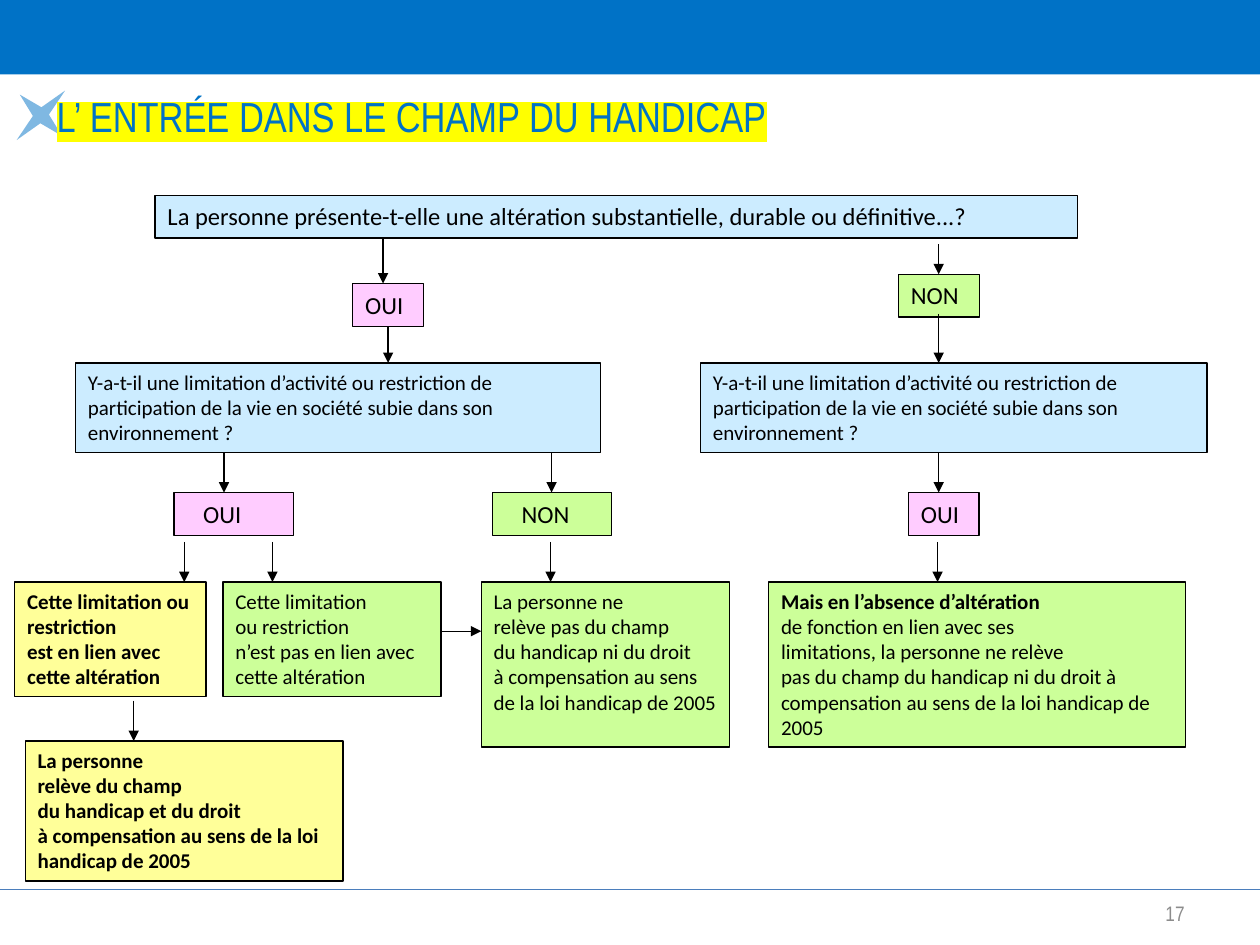
from dataclasses import dataclass

from lxml.etree import SubElement
from pptx import Presentation
from pptx.dml.color import RGBColor
from pptx.enum.shapes import MSO_CONNECTOR, MSO_SHAPE
from pptx.enum.text import MSO_ANCHOR, PP_ALIGN
from pptx.oxml import parse_xml
from pptx.oxml.ns import nsdecls, qn
from pptx.util import Pt

RECT, STAR = MSO_SHAPE.RECTANGLE, MSO_SHAPE.STAR_4_POINT
LINE = MSO_CONNECTOR.STRAIGHT
TOP, MIDDLE = MSO_ANCHOR.TOP, MSO_ANCHOR.MIDDLE
LEFT, RIGHT = PP_ALIGN.LEFT, PP_ALIGN.RIGHT
TITLE_ONLY = 5


@dataclass(frozen=True)
class Theme:
    blue: str = "0072C6"
    rule: str = "4B7EBC"
    mark: str = "FFFF00"
    grey: str = "8C8C8C"
    ink: str = "000000"
    sky: str = "CCECFF"
    pink: str = "FFCCFF"
    green: str = "CCFF99"
    yellow: str = "FFFF99"
    head: str = "Arial Narrow"
    body: str = "Calibri"
    title: float = 24
    large: float = 14
    small: float = 12
    stroke: float = 0.75


THEME = Theme()


@dataclass(frozen=True)
class Box:
    left: float
    top: float
    width: float
    height: float
    fill: str
    lines: tuple[str, ...]
    size: float = THEME.small
    bold: int = 0  # number of leading bold paragraphs
    inset: float = 7.2


@dataclass(frozen=True)
class Arrow:
    x1: float
    y1: float
    x2: float
    y2: float


# Tops of the rows and heights of the boxes
ASK, LIMIT, REPLY, CASE, END = 111.6, 207.4, 281.5, 332.6, 423.4
SHORT, MID = 24.5, 51.1
GAP = 23
LIMITS = ("Y-a-t-il une limitation d’activité ou restriction de participation "
          "de la vie en société subie dans son environnement ?",)

BOXES = (
    Box(88.6, ASK, 527, SHORT, THEME.sky,
        ("La personne présente-t-elle une altération substantielle, "
         "durable ou définitive...?",), THEME.large),
    Box(201.6, 162, 40.3, SHORT, THEME.pink, ("OUI",), THEME.large),
    Box(513.4, 156.7, 46.4, SHORT, THEME.green, ("NON",), THEME.large),
    Box(43.2, LIMIT, 300.2, MID, THEME.sky, LIMITS),
    Box(400.3, LIMIT, 289.4, MID, THEME.sky, LIMITS),
    Box(99.4, REPLY, 68.4, SHORT, THEME.pink, ("OUI",), THEME.large, inset=16.7),
    Box(281.3, REPLY, 68, SHORT, THEME.green, ("NON",), THEME.large, inset=16.7),
    Box(519.1, REPLY, 40.3, SHORT, THEME.pink, ("OUI",), THEME.large),
    Box(439.2, CASE, 238.3, 94.3, THEME.green,
        ("Mais en l’absence d’altération",
         "de fonction en lien avec ses",
         "limitations, la personne ne relève",
         "pas du champ du handicap ni du droit à",
         "compensation au sens de la loi handicap de 2005"), bold=1),
    Box(275, CASE, 141.8, 94.3, THEME.green,
        ("La personne ne",
         "relève pas du champ",
         "du handicap ni du droit",
         "à compensation au sens de la loi handicap de 2005")),
    Box(8.4, CASE, 109.4, 65.5, THEME.yellow,
        ("Cette limitation ou restriction",
         "est en lien avec",
         "cette altération"), bold=3),
    Box(127.4, CASE, 124.6, 65.5, THEME.green,
        ("Cette limitation",
         "ou restriction",
         "n’est pas en lien avec cette altération")),
    Box(14.4, END, 181.6, 80, THEME.yellow,
        ("La personne",
         "relève du champ",
         "du handicap et du droit",
         "à compensation au sens de la loi handicap de 2005"), bold=4),
)


def drop(x: float, end: float, gap: float = GAP) -> Arrow:
    """Describe a downward arrow that stops at end."""
    return Arrow(x, end - gap, x, end)


ARROWS = (
    drop(218.9, 162, 25.9), drop(536.4, 156.7, 17.2),
    drop(221.8, LIMIT, 20.4), drop(536.4, LIMIT, 28),
    *(drop(x, REPLY) for x in (128, 315.2, 536.4)),
    *(drop(x, CASE) for x in (105.3, 155.7, 314.6, 535.8)),
    drop(76.4, END), Arrow(252, 360.7, 275, 360.7),
)


def put(item, **values) -> None:
    for name, value in values.items():
        setattr(item, name, value)


def rgb(code: str) -> RGBColor:
    return RGBColor.from_string(code)


def style(part, face: str, size: float, ink: str, bold: bool = False) -> None:
    put(part.font, name=face, size=Pt(size), bold=bold)
    part.font.color.rgb = rgb(ink)


def draw_shape(shapes, kind, left, top, width, height, fill: str):
    shape = shapes.add_shape(kind, Pt(left), Pt(top), Pt(width), Pt(height))
    shape.shadow.inherit = False
    shape.fill.solid()
    shape.fill.fore_color.rgb = rgb(fill)
    shape.line.fill.background()
    return shape


def draw_box(shapes, box: Box) -> None:
    shape = draw_shape(shapes, RECT, box.left, box.top, box.width, box.height, box.fill)
    shape.line.color.rgb = rgb(THEME.ink)
    shape.line.width = Pt(THEME.stroke)
    frame = shape.text_frame
    put(frame, word_wrap=True, vertical_anchor=TOP, margin_left=Pt(box.inset),
        text="\n".join(box.lines))
    for i, para in enumerate(frame.paragraphs):
        para.alignment = LEFT
        style(para.runs[0], THEME.body, box.size, THEME.ink, i < box.bold)


def draw_line(shapes, line: Arrow, ink: str, tip: bool = True) -> None:
    item = shapes.add_connector(LINE, Pt(line.x1), Pt(line.y1), Pt(line.x2), Pt(line.y2))
    item.line.color.rgb = rgb(ink)
    item.line.width = Pt(THEME.stroke)
    props = item.element.spPr
    if tip:
        SubElement(props.find(qn("a:ln")), qn("a:tailEnd"), type="triangle")
    SubElement(props, qn("a:effectLst"))


def draw_frame(shapes) -> None:
    """Draw the top band, the star and the footer rule."""
    draw_shape(shapes, RECT, 0, 0, 720, 42.5, THEME.blue)
    star = draw_shape(shapes, STAR, 6.5, 46.1, 33.8, 39.6, THEME.blue)
    star.rotation = 44.4
    tint = star.element.spPr.find(qn("a:solidFill"))[0]
    SubElement(tint, qn("a:alpha"), val="50000")
    draw_line(shapes, Arrow(0, 508.3, 720, 508.3), THEME.rule, tip=False)


def draw_title(title) -> None:
    put(title, left=Pt(25.2), top=Pt(41.8), width=Pt(684), height=Pt(56.2))
    frame = title.text_frame
    put(frame, text="L’ ENTRÉE DANS LE CHAMP DU HANDICAP", word_wrap=True,
        vertical_anchor=TOP, margin_top=Pt(10))
    para = frame.paragraphs[0]
    para.alignment = LEFT
    run = para.runs[0]
    style(run, THEME.head, THEME.title, THEME.blue)
    mark = parse_xml(f'<a:highlight {nsdecls("a")}><a:srgbClr val="{THEME.mark}"/></a:highlight>')
    run.font.fill  # the colour comes first in the run properties
    run._r.rPr.find(qn("a:latin")).addprevious(mark)
    # Bring the title in front of the star
    title.element.getparent().append(title.element)


def draw_number(shapes) -> None:
    box = shapes.add_textbox(Pt(516.2), Pt(507.6), Pt(167.8), Pt(28.8))
    put(box.text_frame, text="17", word_wrap=True, vertical_anchor=MIDDLE)
    para = box.text_frame.paragraphs[0]
    para.alignment = RIGHT
    style(para.runs[0], THEME.head, THEME.small, THEME.grey)


def main() -> None:
    deck = Presentation()
    put(deck, slide_width=Pt(720), slide_height=Pt(540))
    shapes = deck.slides.add_slide(deck.slide_layouts[TITLE_ONLY]).shapes
    draw_frame(shapes)
    draw_title(shapes.title)
    draw_number(shapes)
    for box in BOXES:
        draw_box(shapes, box)
    for arrow in ARROWS:
        draw_line(shapes, arrow, THEME.ink)
    deck.save("out.pptx")


if __name__ == "__main__":
    main()
